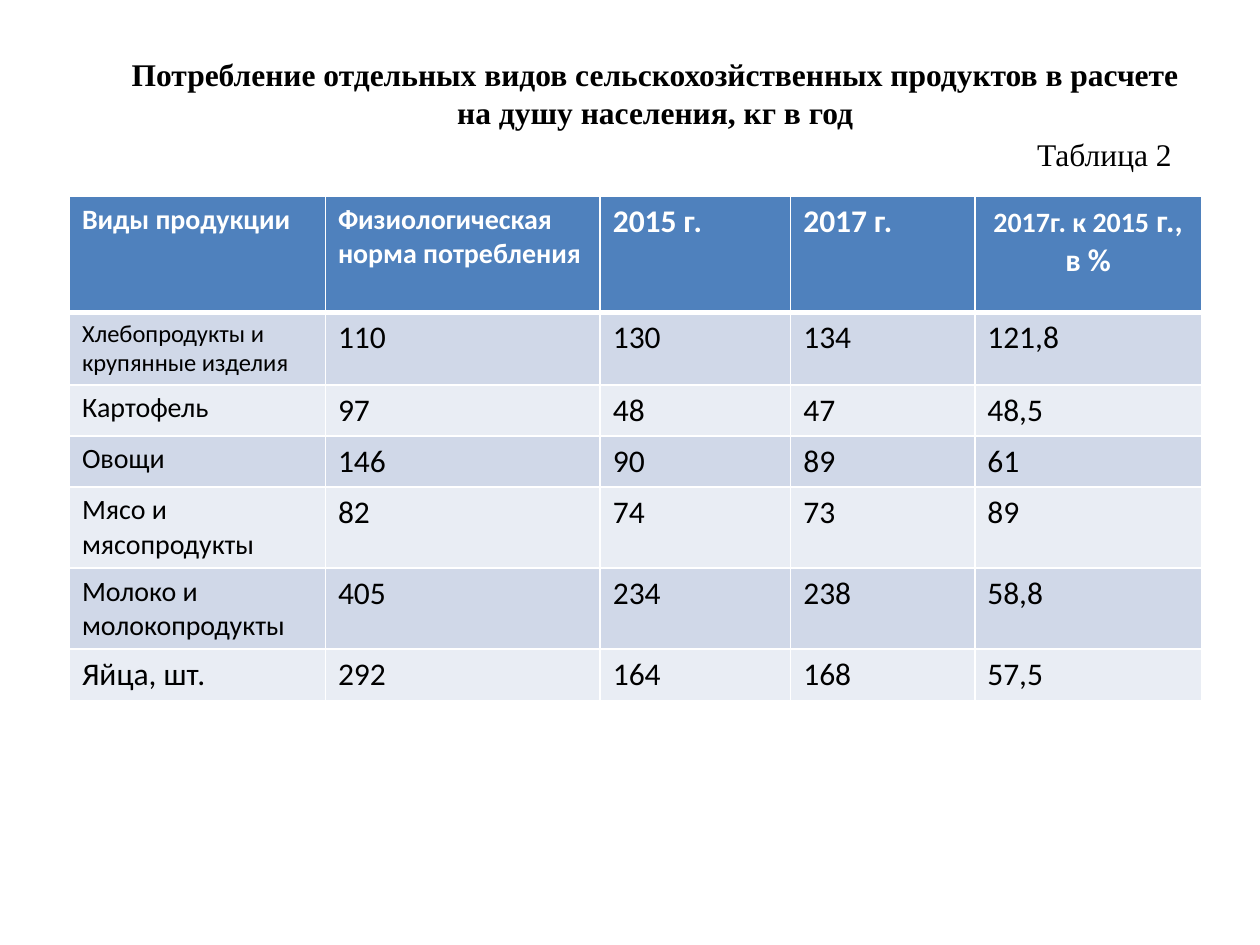
from dataclasses import dataclass

from lxml.etree import SubElement
from pptx import Presentation
from pptx.dml.color import RGBColor
from pptx.enum.text import MSO_ANCHOR, MSO_AUTO_SIZE, PP_ALIGN
from pptx.oxml.ns import qn
from pptx.util import Cm, Pt

WHITE, BLACK = "FFFFFF", "000000"
HEADER_FILL = "4F81BD"
BAND_FILLS = ("D0D8E8", "E9EDF4")
SERIF, SANS = "Times New Roman", "Calibri"

COLUMN_WIDTHS = (5.16, 5.54, 3.84, 3.71, 4.57)
HEADER_HEIGHT = 2.34


@dataclass
class Product:
    name: str
    values: tuple[str, ...]
    height: float
    name_size: int = 16


# Header cells: runs of text with their sizes
HEADERS = (
    (("Виды продукции", 16),),
    (("Физиологическая норма потребления", 16),),
    (("2015 г.", 18),),
    (("2017 г.", 18),),
    (("2017г. к 2015", 16), (" г., в %", 18)),
)

PRODUCTS = (
    Product("Хлебопродукты и крупянные изделия", ("110", "130", "134", "121,8"), 1.45, 14),
    Product("Картофель", ("97", "48", "47", "48,5"), 1.02),
    Product("Овощи", ("146", "90", "89", "61"), 1.02),
    Product("Мясо и мясопродукты", ("82", "74", "73", "89"), 1.61),
    Product("Молоко и молокопродукты", ("405", "234", "238", "58,8"), 1.61),
    Product("Яйца, шт.", ("292", "164", "168", "57,5"), 1.02, 18),
)


def color(value: str) -> RGBColor:
    return RGBColor.from_string(value)


def add_text(p, text: str, *, size: int = 18, font: str = SANS, fill: str = BLACK,
             bold: bool = False, align=PP_ALIGN.LEFT) -> None:
    p.alignment = align
    r = p.add_run()
    r.text = text
    r.font.name, r.font.size, r.font.bold = font, Pt(size), bold
    r.font.color.rgb = color(fill)


def place(sp, left: float, top: float, width: float, height: float) -> None:
    sp.left, sp.top, sp.width, sp.height = Cm(left), Cm(top), Cm(width), Cm(height)


def style_cell(cell, fill: str, top: int = 1, bottom: int = 1) -> None:
    """Draw white borders of the given widths in points, then the fill."""
    tcPr = cell._tc.get_or_add_tcPr()
    for side, width in (("L", 1), ("R", 1), ("T", top), ("B", bottom)):
        ln = SubElement(tcPr, qn(f"a:ln{side}"), w=str(Pt(width)))
        SubElement(SubElement(ln, qn("a:solidFill")), qn("a:srgbClr"), val=WHITE)
    cell.fill.solid()
    cell.fill.fore_color.rgb = color(fill)


def add_product_table(s) -> None:
    shape = s.shapes.add_table(
        len(PRODUCTS) + 1, len(COLUMN_WIDTHS), Cm(1.4), Cm(3.96),
        Cm(sum(COLUMN_WIDTHS)), Cm(HEADER_HEIGHT + sum(p.height for p in PRODUCTS)))
    table = shape.table
    for column, width in zip(table.columns, COLUMN_WIDTHS):
        column.width = Cm(width)

    # Header row, with its last cell centred
    table.rows[0].height = Cm(HEADER_HEIGHT)
    for col, runs in enumerate(HEADERS):
        cell = table.cell(0, col)
        style_cell(cell, HEADER_FILL, bottom=3)
        align = PP_ALIGN.CENTER if col == len(HEADERS) - 1 else PP_ALIGN.LEFT
        for text, size in runs:
            add_text(cell.text_frame.paragraphs[0], text, size=size,
                     fill=WHITE, bold=True, align=align)

    # Banded product rows
    for row, product in enumerate(PRODUCTS, start=1):
        table.rows[row].height = Cm(product.height)
        for col, text in enumerate((product.name, *product.values)):
            cell = table.cell(row, col)
            style_cell(cell, BAND_FILLS[(row - 1) % 2], top=3 if row == 1 else 1)
            add_text(cell.text_frame.paragraphs[0], text,
                     size=18 if col else product.name_size)


def main() -> None:
    prs = Presentation()
    prs.slide_width, prs.slide_height = Cm(25.4), Cm(19.05)
    s = prs.slides.add_slide(prs.slide_layouts.get_by_name("Title Only"))

    add_product_table(s)

    # Title
    title = s.shapes.title
    place(title, 2.39, 0.99, 21.64, 1.8)
    tf = title.text_frame
    tf.word_wrap, tf.auto_size = True, MSO_AUTO_SIZE.NONE
    tf.vertical_anchor = MSO_ANCHOR.TOP
    add_text(tf.paragraphs[0],
             "Потребление отдельных видов сельскохозйственных продуктов "
             "в расчете на душу населения, кг в год",
             font=SERIF, bold=True, align=PP_ALIGN.CENTER)

    # Table number
    sp = s.shapes.add_textbox(Cm(20.45), Cm(2.59), Cm(3.58), Cm(1.02))
    sp.text_frame.word_wrap = True
    add_text(sp.text_frame.paragraphs[0], "Таблица 2 ", font=SERIF, align=PP_ALIGN.RIGHT)

    prs.save("out.pptx")


if __name__ == "__main__":
    main()
